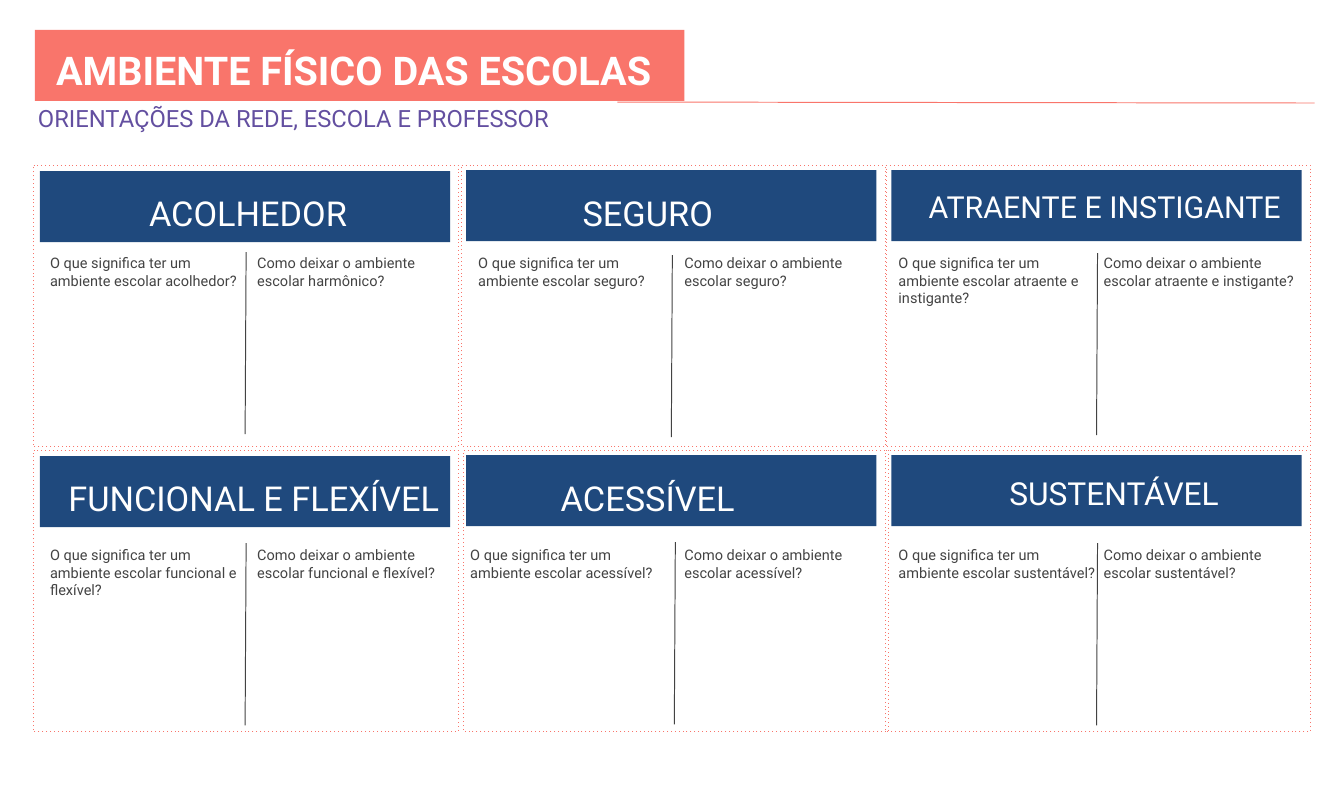
from lxml import etree
from pptx import Presentation
from pptx import util as u
from pptx.dml.color import RGBColor
from pptx.enum import dml, shapes, text
from pptx.oxml.ns import qn

COLORS = {
    "coral": "F9756B",
    "navy": "1F497D",
    "purple": "634FA0",
    "gray": "434343",
    "white": "FFFFFF",
}
FONT = "Roboto"
EMU_PER_PX = 914400 / 95

PANEL_W, PANEL_H = 425, 281
BAR_W, BAR_H = 410, 71
DIVIDER_H = 182
QUESTION_W, QUESTION_H = 194, 66

ROWS = [
    {"panel": 165, "bar": 170, "question": 253},
    {"panel": 450, "bar": 455, "question": 545},
]
COLUMNS = [
    {"bar": 40, "bar_drop": 1, "answer": 256, "label_drop": 6, "label_h": 52, "insets": (13, 14, 0)},
    {"bar": 466, "bar_drop": 0, "answer": 683, "label_drop": 6, "label_h": 146, "insets": (27, 14, 40)},
    {"bar": 891, "bar_drop": 0, "answer": 1102, "label_drop": 2, "label_h": 66, "insets": (22, 14, 0)},
]
TOPICS = [
    [
        {"name": "ACOLHEDOR", "size": 26, "label": (48, 387), "panel": 33, "divider": (246, 252),
         "ask": (49, QUESTION_W), "quality": "acolhedor", "goal": "harmônico"},
        {"name": "SEGURO", "size": 26, "label": (484, 340), "panel": 461, "divider": (672, 255),
         "ask": (477, QUESTION_W), "quality": "seguro", "goal": "seguro"},
        {"name": "ATRAENTE E INSTIGANTE", "size": 23, "label": (891, 405), "panel": 885, "divider": (1097, 253),
         "ask": (897, QUESTION_W), "quality": "atraente e instigante", "goal": "atraente e instigante"},
    ],
    [
        {"name": "FUNCIONAL E FLEXÍVEL", "size": 26, "label": (45, 405), "panel": 33, "divider": (246, 543),
         "ask": (49, QUESTION_W), "quality": "funcional e flexível", "goal": "funcional e flexível"},
        {"name": "ACESSÍVEL", "size": 26, "label": (484, 340), "panel": 463, "divider": (675, 542),
         "ask": (469, 206), "quality": "acessível", "goal": "acessível"},
        {"name": "SUSTENTÁVEL", "size": 24, "label": (909, 387), "panel": 885, "divider": (1097, 543),
         "ask": (897, 200), "quality": "sustentável", "goal": "sustentável"},
    ],
]


def px(length):
    """Turn pixels into EMU."""
    return u.Emu(round(length * EMU_PER_PX))


def rgb(name):
    """Look up a named colour."""
    return RGBColor.from_string(COLORS[name])


def write(frame, words, size=11, color="gray", bold=False, align=text.PP_ALIGN.LEFT,
          spacing=1.0, insets=(1, 1, 0)):
    """Fill a text frame with one formatted paragraph."""
    frame.word_wrap = True
    frame.auto_size = text.MSO_AUTO_SIZE.NONE
    frame.vertical_anchor = text.MSO_ANCHOR.TOP
    frame.margin_left, frame.margin_top, frame.margin_right = map(px, insets)
    frame.margin_bottom = 0
    paragraph = frame.paragraphs[0]
    paragraph.alignment = align
    paragraph.line_spacing = spacing
    run = paragraph.add_run()
    run.text = words
    run.font.name = FONT
    run.font.size = u.Pt(size)
    run.font.bold = bold
    run.font.color.rgb = rgb(color)


class Board:
    """Holds the slide and draws its elements in one style."""

    def __init__(self, deck):
        """Add a title-only slide."""
        self.slide = deck.slides.add_slide(deck.slide_layouts[5])
        self.shapes = self.slide.shapes

    def box(self, *place):
        """Add a plain rectangle without shadow."""
        rectangle = self.shapes.add_shape(shapes.MSO_SHAPE.RECTANGLE, *map(px, place))
        rectangle.shadow.inherit = False
        return rectangle

    def bar(self, *place, color):
        """Add a filled bar."""
        bar = self.box(*place)
        bar.fill.solid()
        bar.fill.fore_color.rgb = rgb(color)
        bar.line.fill.background()

    def panel(self, *place):
        """Add an empty panel with a dotted outline."""
        panel = self.box(*place)
        panel.fill.background()
        panel.line.color.rgb = rgb("coral")
        panel.line.width = u.Pt(0.75)
        panel.line.dash_style = dml.MSO_LINE.ROUND_DOT
        panel.element.find(".//" + qn("a:prstDash")).set("val", "dot")

    def rule(self, *ends, color):
        """Add a thin straight line."""
        rule = self.shapes.add_connector(shapes.MSO_CONNECTOR.STRAIGHT, *map(px, ends))
        rule.line.color.rgb = rgb(color)
        rule.line.width = u.Pt(0.75)
        etree.SubElement(rule.element.spPr, qn("a:effectLst"))

    def title(self, words, *place, **style):
        """Place the title in front of what is already drawn."""
        title = self.shapes.title
        title.left, title.top, title.width, title.height = map(px, place)
        write(title.text_frame, words, **style)
        self.shapes.element.append(title.element)

    def label(self, words, *place, **style):
        """Add a text box."""
        write(self.shapes.add_textbox(*map(px, place)).text_frame, words, **style)

    def topic(self, topic, row, column):
        """Draw one panel with its heading, divider and two questions."""
        self.panel(topic["panel"], row["panel"], PANEL_W, PANEL_H)
        self.bar(column["bar"], row["bar"] + column["bar_drop"], BAR_W, BAR_H, color="navy")
        left, width = topic["label"]
        self.label(topic["name"], left, row["bar"] + column["label_drop"], width, column["label_h"],
                   size=topic["size"], color="white", align=text.PP_ALIGN.CENTER,
                   spacing=1.06, insets=column["insets"])
        x, y = topic["divider"]
        self.rule(x, y, x - 1, y + DIVIDER_H, color="gray")
        left, width = topic["ask"]
        self.label(f"O que significa ter um ambiente escolar {topic['quality']}?",
                   left, row["question"], width, QUESTION_H)
        self.label(f"Como deixar o ambiente escolar {topic['goal']}?",
                   column["answer"], row["question"], QUESTION_W, QUESTION_H)


def main():
    """Build the slide and save it."""
    deck = Presentation()
    deck.slide_width, deck.slide_height = u.Inches(14.14), u.Inches(8.27)
    board = Board(deck)
    board.bar(35, 30, 649, 71, color="coral")
    board.title("AMBIENTE FÍSICO DAS ESCOLAS", 55, 45, 649, 66, size=30, color="white", bold=True)
    board.label("ORIENTAÇÕES DA REDE, ESCOLA E PROFESSOR", 37, 103, 649, 66, size=18, color="purple")
    board.rule(617, 102, 1314, 103, color="coral")
    for row, topics in zip(ROWS, TOPICS):
        for column, topic in zip(COLUMNS, topics):
            board.topic(topic, row, column)
    deck.save("out.pptx")


if __name__ == "__main__":
    main()
